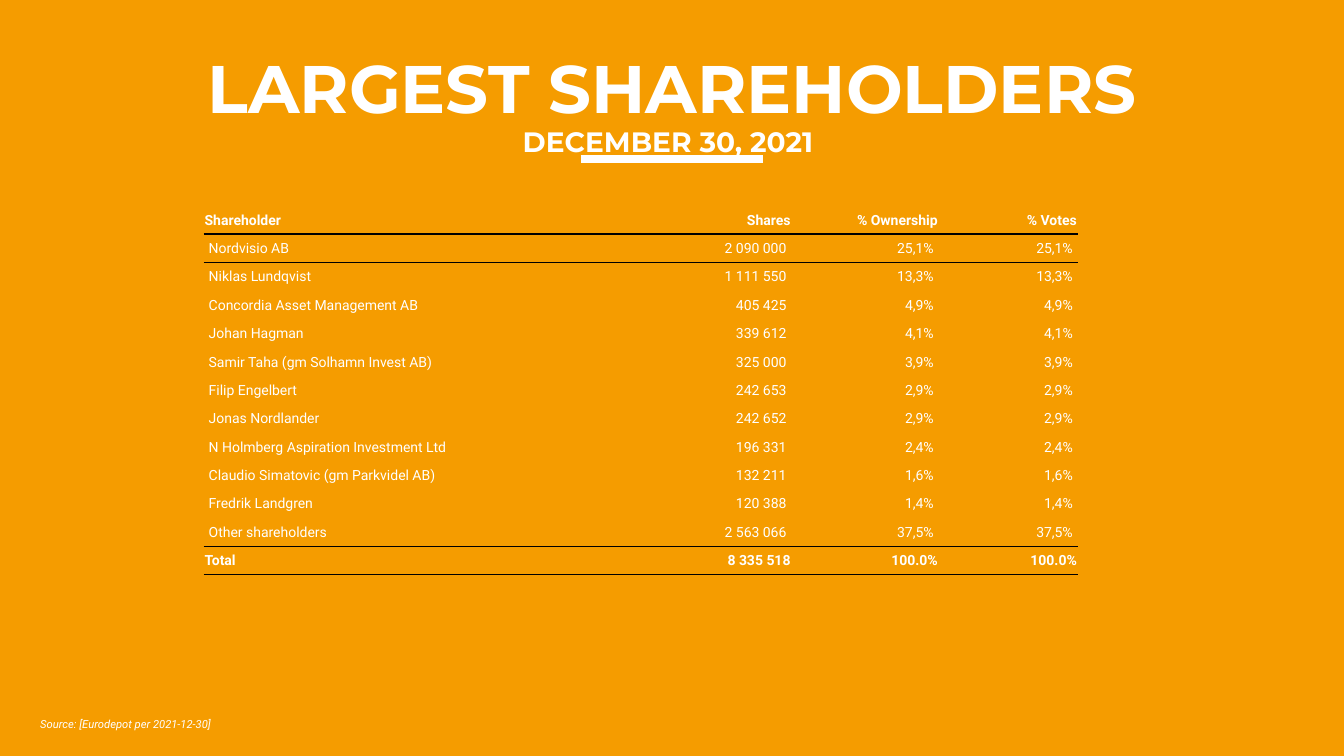
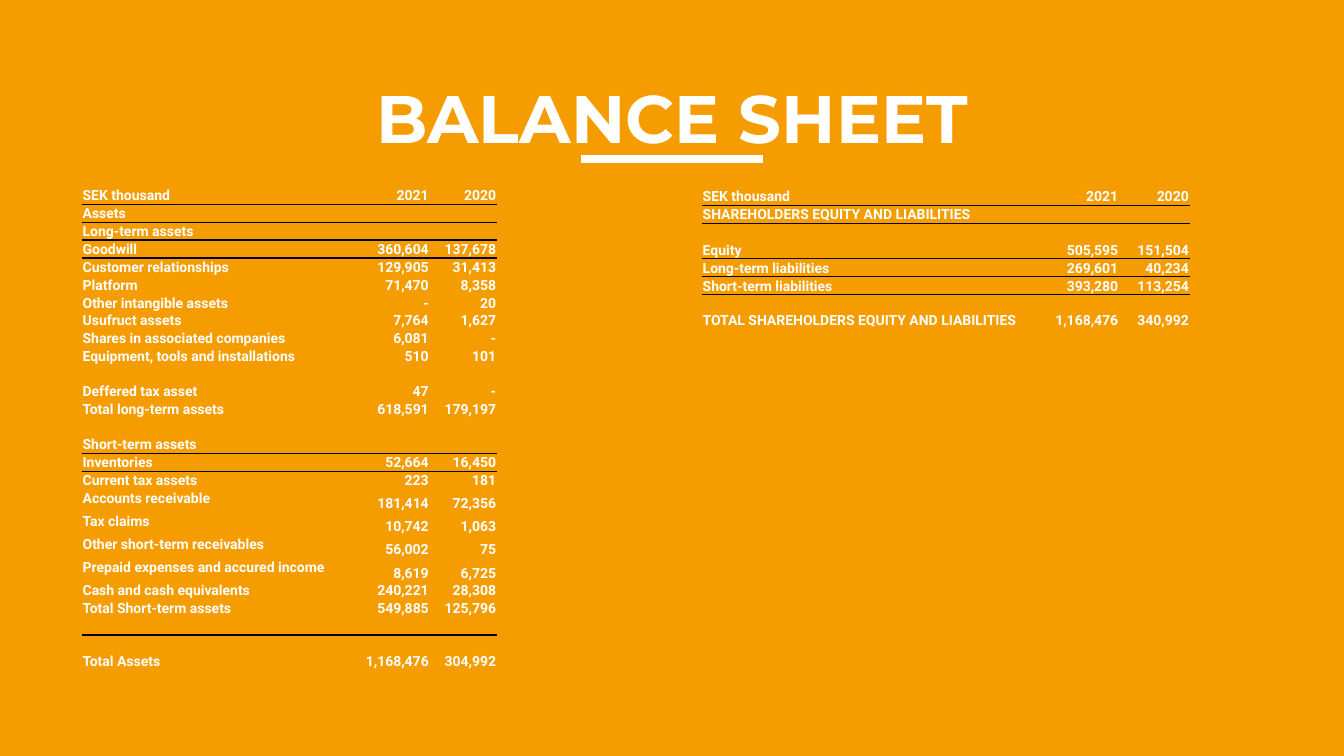
from lxml.etree import SubElement
from pptx import Presentation
from pptx.dml.color import RGBColor
from pptx.enum.shapes import MSO_CONNECTOR
from pptx.enum.text import MSO_ANCHOR, PP_ALIGN
from pptx.oxml.ns import qn
from pptx.util import Inches, Pt

COLORS = {"background": "F59C00", "text": "FFFFFF", "rule": "000000"}
NO_GRID_STYLE = "{2D5ABB26-0587-4C30-8999-92F81FD0307C}"

# Text formats
TITLE = {"name": "Montserrat", "size": Pt(48), "bold": True}
SUBTITLE = {**TITLE, "size": Pt(20)}
BODY = {"name": "Roboto", "size": Pt(10), "bold": False}
STRONG = {**BODY, "bold": True}
SOURCE = {"name": "Roboto", "size": Pt(8), "italic": True}

# Cell margins
TIGHT = {"margin_left": Inches(0.01), "margin_right": Inches(0.01),
         "margin_top": Inches(0.01), "margin_bottom": 0}
INDENTED = {"margin_left": Inches(0.05), "margin_right": Inches(0.05),
            "margin_top": 0, "margin_bottom": 0}
RAISED = {**TIGHT, "margin_bottom": Inches(0.05)}

# Boxes: left, top, width, height
TITLE_BOX = (0.68, 0.28, 11.97, 1.34)
SOURCE_BOX = (0.3, 7.07, 1.98, 0.24)
SHAREHOLDER_BOX = (2.02, 2.04, 8.67, 3.66)
ASSETS_BOX = (0.81, 1.85, 4.12, 4.78)
LIABILITIES_BOX = (6.96, 1.86, 4.84, 1.4)

SHAREHOLDERS = [
    ("Shareholder", "Shares", "% Ownership", "% Votes"),
    ("Nordvisio AB", "2 090 000", "25,1%", "25,1%"),
    ("Niklas Lundqvist", "1 111 550", "13,3%", "13,3%"),
    ("Concordia Asset Management AB", "405 425", "4,9%", "4,9%"),
    ("Johan Hagman", "339 612", "4,1%", "4,1%"),
    ("Samir Taha (gm Solhamn Invest AB)", "325 000", "3,9%", "3,9%"),
    ("Filip Engelbert", "242 653", "2,9%", "2,9%"),
    ("Jonas Nordlander", "242 652", "2,9%", "2,9%"),
    ("N Holmberg Aspiration Investment Ltd", "196 331", "2,4%", "2,4%"),
    ("Claudio Simatovic (gm Parkvidel AB)", "132 211", "1,6%", "1,6%"),
    ("Fredrik Landgren", "120 388", "1,4%", "1,4%"),
    ("Other shareholders", "2 563 066", "37,5%", "37,5%"),
    ("Total", "8 335 518", "100.0%", "100.0%"),
]

ASSETS = [
    ("SEK thousand", "2021", "2020"),
    ("Assets", "", ""),
    ("Long-term assets", "", ""),
    ("Goodwill", "360,604", "137,678"),
    ("Customer relationships", "129,905", "31,413"),
    ("Platform", "71,470", "8,358"),
    ("Other intangible assets", "-", "20"),
    ("Usufruct assets", "7,764", "1,627"),
    ("Shares in associated companies", "6,081", "-"),
    ("Equipment, tools and installations", "510", "101"),
    ("Deffered tax asset", "47", "-"),
    ("Total long-term assets", "618,591", "179,197"),
    ("", "", ""),
    ("Short-term assets", "", ""),
    ("Inventories", "52,664", "16,450"),
    ("Current tax assets", "223", "181"),
    ("Accounts receivable", "181,414", "72,356"),
    ("Tax claims", "10,742", "1,063"),
    ("Other short-term receivables", "56,002", "75"),
    ("Prepaid expenses and accured income", "8,619", "6,725"),
    ("Cash and cash equivalents", "240,221", "28,308"),
    ("Total Short-term assets", "549,885", "125,796"),
    ("", "", ""),
    ("Total Assets", "1,168,476", "304,992"),
]

LIABILITIES = [
    ("SEK thousand", "2021", "2020"),
    ("SHAREHOLDERS EQUITY AND LIABILITIES", "", ""),
    ("", "", ""),
    ("Equity", "505,595", "151,504"),
    ("Long-term liabilities", "269,601", "40,234"),
    ("Short-term liabilities", "393,280", "113,254"),
    ("TOTAL SHAREHOLDERS EQUITY AND LIABILITIES", "1,168,476", "340,992"),
]


def set_all(target, formats):
    for attribute, value in formats.items():
        setattr(target, attribute, value)


def add_run(paragraph, text, formats):
    run = paragraph.add_run()
    run.text = text
    set_all(run.font, formats)
    run.font.color.rgb = RGBColor.from_string(COLORS["text"])


def add_title(slide, box, title, subtitle=None):
    frame = slide.shapes.add_textbox(*map(Inches, box)).text_frame
    set_all(frame, {"word_wrap": True, "vertical_anchor": MSO_ANCHOR.BOTTOM})
    heading = frame.paragraphs[0]
    set_all(heading, {"alignment": PP_ALIGN.CENTER, "line_spacing": 0.9})
    add_run(heading, title, TITLE)
    if subtitle:
        heading.add_line_break()
        add_run(heading, subtitle, SUBTITLE)

    # Bar centred under the title
    left, top, width, height = box
    center, bar_y, half_bar = left + width / 2, top + height - 0.04, 0.905
    bar = slide.shapes.add_connector(
        MSO_CONNECTOR.STRAIGHT, Inches(center - half_bar), Inches(bar_y),
        Inches(center + half_bar), Inches(bar_y))
    bar.line.width = Pt(6)
    bar.line.color.rgb = RGBColor.from_string(COLORS["text"])
    SubElement(bar._element.spPr, qn("a:effectLst"))


def add_source(slide, box, text):
    frame = slide.shapes.add_textbox(*map(Inches, box)).text_frame
    frame.word_wrap = False
    add_run(frame.paragraphs[0], text, SOURCE)


def add_rule(cell, side):
    border = SubElement(cell._tc.get_or_add_tcPr(), qn(f"a:{side}"), w=str(Pt(1)))
    fill = SubElement(border, qn("a:solidFill"))
    SubElement(fill, qn("a:srgbClr"), val=COLORS["rule"])


def fill_cell(cell, text, alignment, font, line_spacing=None):
    paragraph = cell.text_frame.paragraphs[0]
    set_all(paragraph, {"alignment": alignment, "line_spacing": line_spacing})
    if text:
        add_run(paragraph, text, font)
    else:
        # Keeps an empty row as low as the rows with text
        SubElement(paragraph._p, qn("a:endParaRPr"), sz=str(int(font["size"].pt * 100)))


def add_figures(slide, box, column_shares, row_shares, rows, ruled_rows, cell_style):
    """Table whose ruled_rows have a line below; cell_style(row, column)
    gives margins, anchor, font and line spacing."""
    left, top, width, height = box
    table = slide.shapes.add_table(
        len(rows), len(column_shares), *map(Inches, box)).table
    set_all(table, {"first_row": False, "horz_banding": False})
    table._tbl.tblPr.find(qn("a:tableStyleId")).text = NO_GRID_STYLE

    for column, share in zip(table.columns, column_shares):
        column.width = Inches(width * share / sum(column_shares))
    for row, share in zip(table.rows, row_shares):
        row.height = Inches(height * share / sum(row_shares))

    for r, values in enumerate(rows):
        for c, text in enumerate(values):
            cell = table.cell(r, c)
            margins, anchor, font, line_spacing = cell_style(r, c)
            set_all(cell, {**margins, "vertical_anchor": anchor})
            if r - 1 in ruled_rows:
                add_rule(cell, "lnT")
            if r in ruled_rows:
                add_rule(cell, "lnB")
            cell.fill.background()
            alignment = PP_ALIGN.RIGHT if c else PP_ALIGN.LEFT
            fill_cell(cell, text, alignment, font, line_spacing)


def shareholder_style(row, column):
    if row in (0, len(SHAREHOLDERS) - 1):
        return TIGHT, MSO_ANCHOR.MIDDLE, STRONG, None
    return INDENTED, MSO_ANCHOR.MIDDLE, BODY, 1.07


def balance_style(row, column, raised_rows=()):
    margins = RAISED if row in raised_rows and column == 0 else TIGHT
    return margins, MSO_ANCHOR.BOTTOM, STRONG, None


def shareholders_slide(slide):
    add_title(slide, TITLE_BOX, "LARGEST SHAREHOLDERS", "DECEMBER 30, 2021 ")
    add_source(slide, SOURCE_BOX, "Source: [Eurodepot per 2021-12-30]")
    add_figures(slide, SHAREHOLDER_BOX, (4.52, 1.31, 1.46, 1.38),
                [1] * len(SHAREHOLDERS), SHAREHOLDERS, (0, 11, 12),
                shareholder_style)


def balance_slide(slide):
    add_title(slide, TITLE_BOX, "BALANCE SHEET")

    # Assets, with taller rows for receivables and after gaps
    receivables = range(16, 20)
    asset_rows = [1.95 if r in (10, 23) else 1.3 if r in receivables else 1
                  for r in range(len(ASSETS))]
    add_figures(slide, ASSETS_BOX, (2.75, 0.71, 0.67), asset_rows, ASSETS,
                (0, 2, 13, 22),
                lambda row, column: balance_style(row, column, receivables))

    # Equity and liabilities
    liability_rows = [1] * (len(LIABILITIES) - 1) + [1.95]
    add_figures(slide, LIABILITIES_BOX, (3.44, 0.7, 0.7), liability_rows,
                LIABILITIES, (0, 3, 5), balance_style)


def main():
    deck = Presentation()
    set_all(deck, {"slide_width": Inches(13.33), "slide_height": Inches(7.5)})
    backdrop = deck.slide_master.background.fill
    backdrop.solid()
    backdrop.fore_color.rgb = RGBColor.from_string(COLORS["background"])
    for build in (shareholders_slide, balance_slide):
        build(deck.slides.add_slide(deck.slide_layouts[6]))
    deck.save("out.pptx")


if __name__ == "__main__":
    main()
